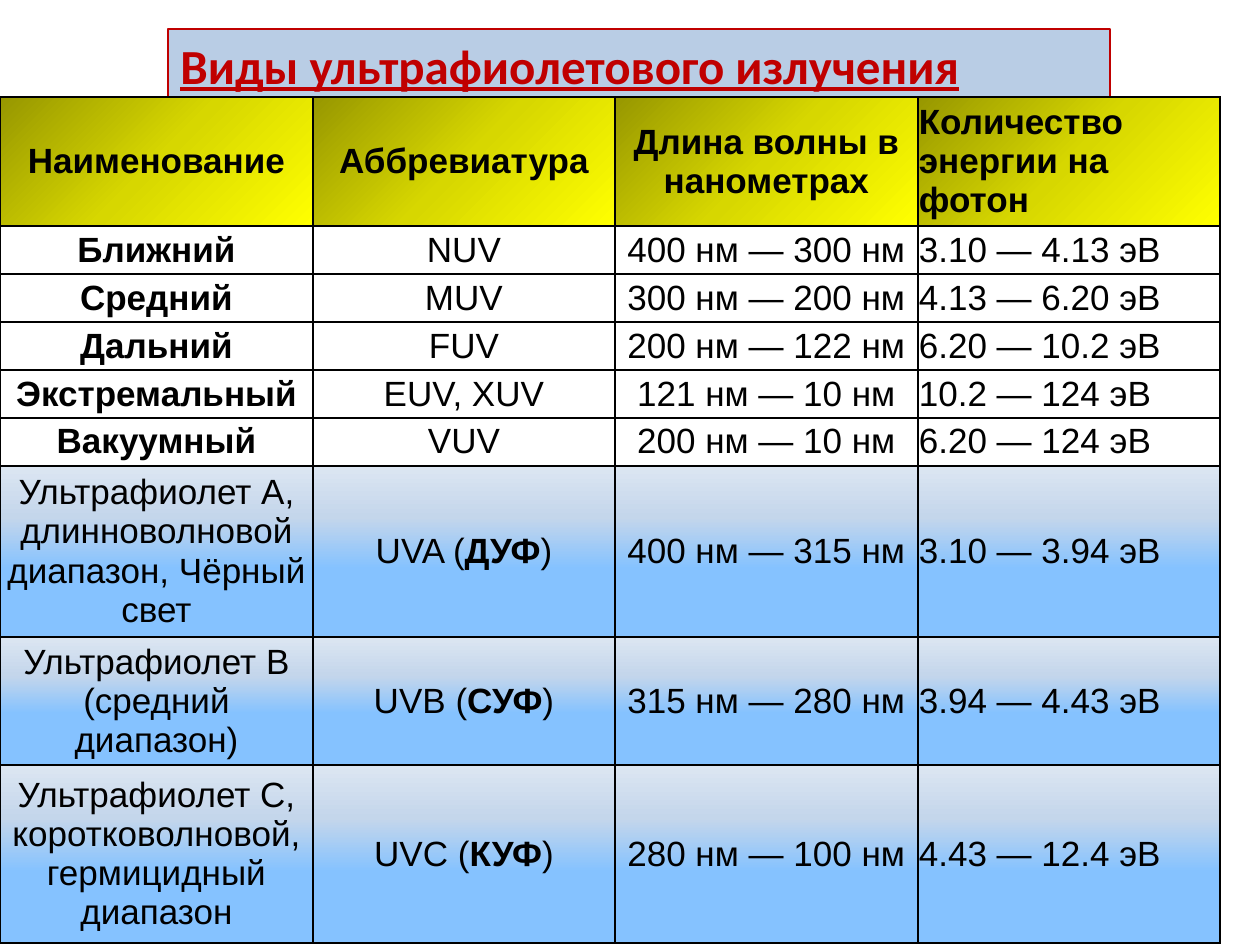
from lxml.etree import SubElement
from pptx import Presentation
from pptx.dml.color import RGBColor
from pptx.enum.shapes import MSO_SHAPE
from pptx.enum.text import MSO_ANCHOR, MSO_AUTO_SIZE, PP_ALIGN
from pptx.oxml.ns import qn
from pptx.util import Emu, Pt

PX = 914400 // 126

YELLOW = ([(0, "979700"), (50, "D7D700"), (100, "FFFF00")], 45)
BLUE = ([(40, "85C2FF"), (70, "C4D6EB"), (100, "DCE6F2"), (100, "FFEBFA")], 270)

COL_WIDTHS = [313, 302, 303, 302]
ROW_HEIGHTS = [129] + [48] * 5 + [171, 128, 178]
HEADER = ["Наименование", "Аббревиатура", "Длина волны в нанометрах",
          "Количество энергии на фотон"]
PHYSICAL = [
    ["Ближний", "NUV", "400 нм — 300 нм", "3.10 — 4.13 эВ"],
    ["Средний", "MUV", "300 нм — 200 нм", "4.13 — 6.20 эВ"],
    ["Дальний", "FUV", "200 нм — 122 нм", "6.20 — 10.2 эВ"],
    ["Экстремальный", "EUV, XUV", "121 нм — 10 нм", "10.2 — 124 эВ"],
    ["Вакуумный", "VUV", "200 нм — 10 нм", "6.20 — 124 эВ"],
]
BIOLOGICAL = [
    ["Ультрафиолет А, длинноволновой диапазон, Чёрный свет",
     "UVA (*ДУФ*)", "400 нм — 315 нм", "3.10 — 3.94 эВ"],
    ["Ультрафиолет B (средний диапазон)",
     "UVB (*СУФ*)", "315 нм — 280 нм", "3.94 — 4.43 эВ"],
    ["Ультрафиолет С, коротковолновой, гермицидный диапазон",
     "UVC (*КУФ*)", "280 нм — 100 нм", "4.43 — 12.4 эВ"],
]


def px(n):
    return Emu(n * PX)


def rgb(color):
    return RGBColor.from_string(color)


def add_solid(parent, color):
    fill = SubElement(parent, qn("a:solidFill"))
    SubElement(fill, qn("a:srgbClr"), val=color)


class Slide:
    font, size, ink, border = "Arial", 20, "000000", 1

    def __init__(self, prs):
        self.s = prs.slides.add_slide(prs.slide_layouts[6])

    def style(self, p, bold=None, font=None, size=None, color=None):
        f = p.font
        f.name, f.size = font or self.font, Pt(size or self.size)
        f.bold = bold
        f.color.rgb = rgb(color or self.ink)

    def title(self, text, x, y, w, h):
        sp = self.s.shapes.add_shape(MSO_SHAPE.RECTANGLE, px(x), px(y), px(w), px(h))
        sp.shadow.inherit = False
        sp.fill.solid()
        sp.fill.fore_color.rgb = rgb("B9CDE5")
        sp.line.color.rgb = rgb("C00000")
        sp.line.width = Pt(0.75)
        tf = sp.text_frame
        tf.word_wrap = True
        tf.auto_size = MSO_AUTO_SIZE.SHAPE_TO_FIT_TEXT
        tf.vertical_anchor = MSO_ANCHOR.TOP
        p = tf.paragraphs[0]
        p.text, p.alignment = text, PP_ALIGN.LEFT
        self.style(p, True, "Calibri", 28, "C00000")
        p.font.underline = True

    def cell(self, cell, text, align, bold, gradient):
        """Fill one cell; text between asterisks is bold."""
        cell.margin_left = cell.margin_right = px(1)
        cell.margin_top = cell.margin_bottom = px(1)
        cell.vertical_anchor = MSO_ANCHOR.MIDDLE
        p = cell.text_frame.paragraphs[0]
        p.alignment = align
        self.style(p, bold)
        # A no-break space keeps each dash on the line of its first value.
        for i, part in enumerate(text.replace(" —", chr(160) + "—").split("*")):
            r = p.add_run()
            r.text = part
            if i % 2:
                r.font.bold = True
        self.cell_look(cell, gradient)

    def cell_look(self, cell, gradient):
        """Set borders first, then the fill, as the schema orders them."""
        pr = cell._tc.get_or_add_tcPr()
        for side in ("lnL", "lnR", "lnT", "lnB"):
            add_solid(SubElement(pr, qn(f"a:{side}"), w=str(Pt(self.border))), self.ink)
        if not gradient:
            cell.fill.background()
            return
        stops, angle = gradient
        fill = SubElement(pr, qn("a:gradFill"), rotWithShape="1")
        gs_list = SubElement(fill, qn("a:gsLst"))
        for pos, color in stops:
            gs = SubElement(gs_list, qn("a:gs"), pos=str(pos * 1000))
            SubElement(gs, qn("a:srgbClr"), val=color)
        SubElement(fill, qn("a:lin"), ang=str(angle * 60000), scaled="0")

    def table(self, x, y, widths, heights, rows):
        """Build a table from (texts, bold columns, gradient) rows."""
        tbl = self.s.shapes.add_table(len(heights), len(widths), px(x), px(y),
                                      px(sum(widths)), px(sum(heights))).table
        tbl.horz_banding = False
        for col, w in zip(tbl.columns, widths):
            col.width = px(w)
        for i, (h, (texts, bold_cols, gradient)) in enumerate(zip(heights, rows)):
            tbl.rows[i].height = px(h)
            for j, text in enumerate(texts):
                align = PP_ALIGN.LEFT if j == len(widths) - 1 else PP_ALIGN.CENTER
                self.cell(tbl.cell(i, j), text, align, j < bold_cols, gradient)


def main():
    prs = Presentation()
    prs.slide_width, prs.slide_height = px(1260), px(945)
    slide = Slide(prs)
    slide.title("Виды ультрафиолетового излучения", 168, 29, 942, 72)
    rows = [(HEADER, len(HEADER), YELLOW)]
    rows += [(texts, 1, None) for texts in PHYSICAL]
    rows += [(texts, 0, BLUE) for texts in BIOLOGICAL]
    slide.table(0, 97, COL_WIDTHS, ROW_HEIGHTS, rows)
    prs.save("out.pptx")


if __name__ == "__main__":
    main()
